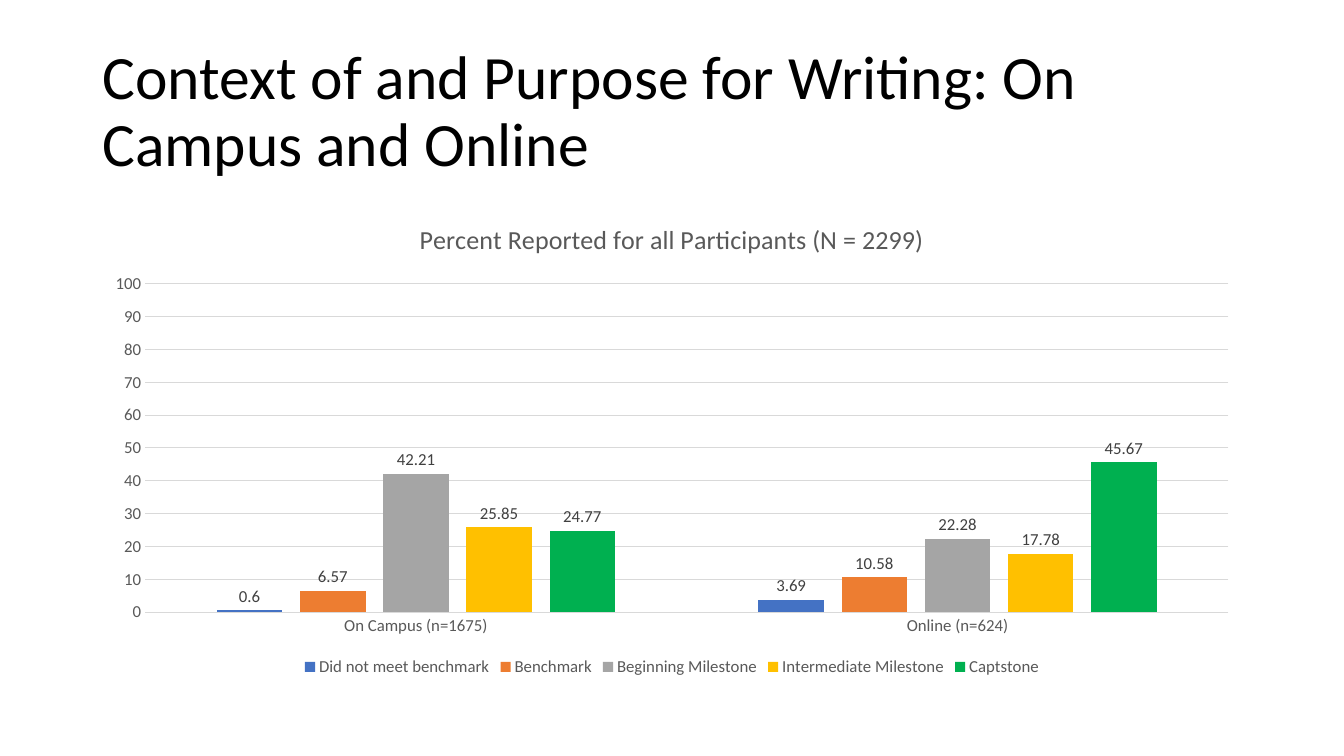
import pptx
import pptx.chart.data
import pptx.dml.color
import pptx.enum.chart
import pptx.enum.text
import pptx.util

Cm = pptx.util.Cm
Pt = pptx.util.Pt
RGBColor = pptx.dml.color.RGBColor

BLACK = RGBColor(0x00, 0x00, 0x00)
LABEL_GREY = RGBColor(0x40, 0x40, 0x40)
TEXT_GREY = RGBColor(0x59, 0x59, 0x59)
GRID_GREY = RGBColor(0xD9, 0xD9, 0xD9)
BLUE = RGBColor(0x44, 0x72, 0xC4)
ORANGE = RGBColor(0xED, 0x7D, 0x31)
GREY = RGBColor(0xA5, 0xA5, 0xA5)
GOLD = RGBColor(0xFF, 0xC0, 0x00)
GREEN = RGBColor(0x00, 0xB0, 0x50)

CAMPUSES = ["On Campus (n=1675)", "Online (n=624)"]
LEVELS = [
    ("Did not meet benchmark", (0.6, 3.69), BLUE),
    ("Benchmark", (6.57, 10.58), ORANGE),
    ("Beginning Milestone", (42.21, 22.28), GREY),
    ("Intermediate Milestone", (25.85, 17.78), GOLD),
    ("Captstone", (24.77, 45.67), GREEN),
]


class SlideBuilder:
    """Hold the text style and the current page, and add elements to it."""

    def __init__(self, page, typeface="Calibri"):
        self.page = page
        self.typeface = typeface

    def style(self, font, size, color):
        font.name = self.typeface
        font.size = Pt(size)
        font.bold = False
        font.color.rgb = color

    def title(self, text, left, top, width, height):
        box = self.page.shapes.add_textbox(Cm(left), Cm(top), Cm(width), Cm(height))
        frame = box.text_frame
        frame.word_wrap = True
        frame.vertical_anchor = pptx.enum.text.MSO_ANCHOR.MIDDLE
        para = frame.paragraphs[0]
        para.text = text
        para.line_spacing = 0.9
        self.style(para.font, 44, BLACK)

    def column_chart(self, heading, categories, levels, left, top, width, height):
        data = pptx.chart.data.CategoryChartData()
        data.categories = categories
        for name, values, _ in levels:
            data.add_series(name, values)
        kind = pptx.enum.chart.XL_CHART_TYPE.COLUMN_CLUSTERED
        frame = self.page.shapes.add_chart(
            kind, Cm(left), Cm(top), Cm(width), Cm(height), data)
        chart = frame.chart
        self.style(chart.font, 10, BLACK)

        chart.has_title = True
        para = chart.chart_title.text_frame.paragraphs[0]
        para.text = heading
        self.style(para.font, 18.6, TEXT_GREY)
        chart.chart_title.include_in_layout = False

        chart.has_legend = True
        chart.legend.position = pptx.enum.chart.XL_LEGEND_POSITION.BOTTOM
        chart.legend.include_in_layout = False
        self.style(chart.legend.font, 12, TEXT_GREY)

        self.axes(chart)
        self.columns(chart.plots[0], levels)

    def axes(self, chart):
        for axis in (chart.category_axis, chart.value_axis):
            axis.major_tick_mark = pptx.enum.chart.XL_TICK_MARK.NONE
            axis.minor_tick_mark = pptx.enum.chart.XL_TICK_MARK.NONE
            self.style(axis.tick_labels.font, 12, TEXT_GREY)
        scale = chart.value_axis
        scale.minimum_scale = 0
        scale.maximum_scale = 100
        scale.major_unit = 10
        scale.has_major_gridlines = True
        scale.format.line.fill.background()
        for item in (chart.category_axis, scale.major_gridlines):
            item.format.line.color.rgb = GRID_GREY
            item.format.line.width = Pt(0.75)

    def columns(self, plot, levels):
        plot.vary_by_categories = False
        plot.gap_width = 219
        plot.overlap = -27
        for series, (_, _, color) in zip(plot.series, levels):
            series.format.fill.solid()
            series.format.fill.fore_color.rgb = color
            series.invert_if_negative = False
            labels = series.data_labels
            labels.show_value = True
            labels.position = pptx.enum.chart.XL_LABEL_POSITION.OUTSIDE_END
            self.style(labels.font, 12, LABEL_GREY)


def main():
    deck = pptx.Presentation()
    deck.slide_width = Cm(33.87)
    deck.slide_height = Cm(19.05)
    page = deck.slides.add_slide(deck.slide_layouts[6])
    builder = SlideBuilder(page)
    builder.title("Context of and Purpose for Writing: On Campus and Online",
                  2.33, 1.01, 29.21, 3.68)
    builder.column_chart("Percent Reported for all Participants (N = 2299)",
                         CAMPUSES, LEVELS, 2.33, 5.07, 29.21, 12.09)
    deck.save("out.pptx")


if __name__ == "__main__":
    main()
